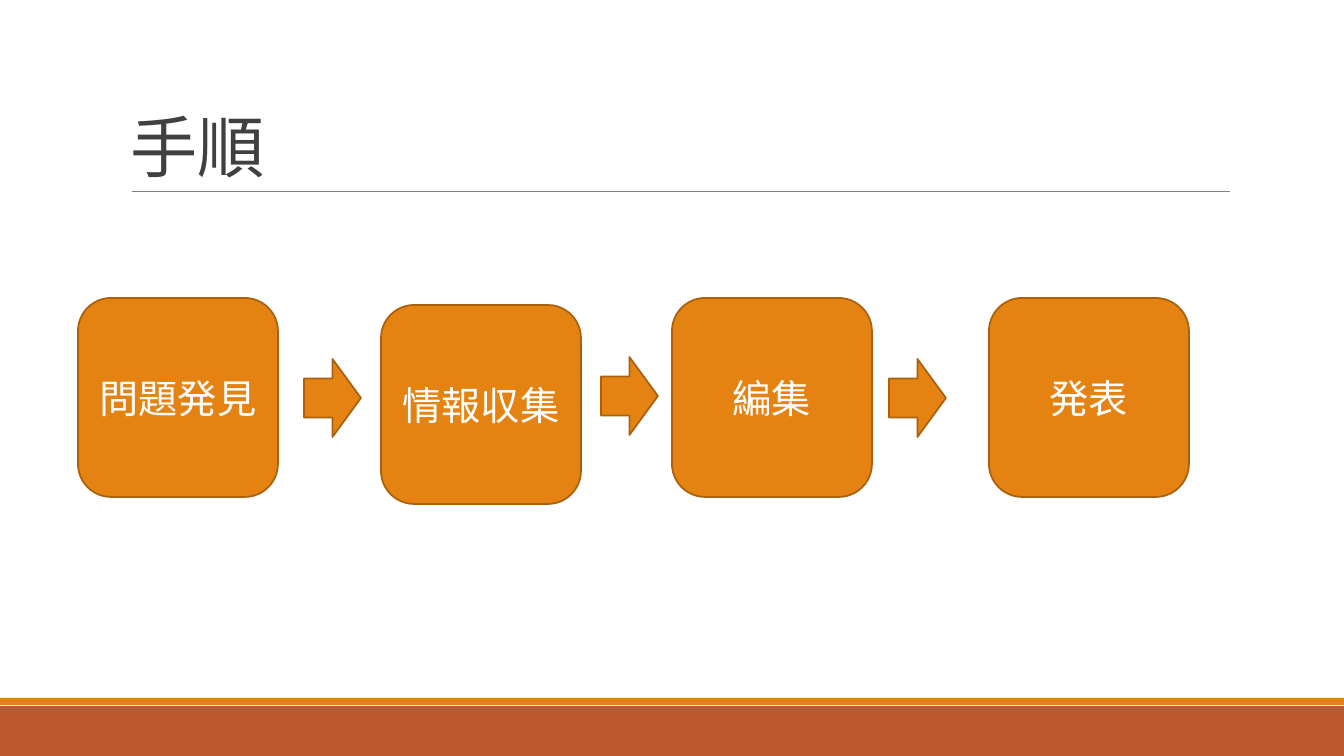
"""Build the slide showing the four steps of the procedure."""
import lxml.etree
import pptx
import pptx.dml.color
import pptx.enum.shapes
import pptx.enum.text
import pptx.oxml.ns
import pptx.util

RGBColor = pptx.dml.color.RGBColor
Shape = pptx.enum.shapes.MSO_SHAPE
Anchor = pptx.enum.text.MSO_ANCHOR
Align = pptx.enum.text.PP_ALIGN

TITLE = "手順"
STEPS = [("問題発見", 78, 298), ("情報収集", 381, 305), ("編集", 672, 298), ("発表", 989, 298)]
ARROWS = [(304, 359), (601, 357), (889, 359)]
STEP_SIZE = (200, 199)
ARROW_SIZE = (57, 78)

SLIDE_W, SLIDE_H = 1344, 756
FOOTER_H, STRIPE_H = 50, 7
FONT = "Calibri"
ORANGE = RGBColor(0xE4, 0x83, 0x12)
OUTLINE = RGBColor(0xA9, 0x61, 0x0D)
RUST = RGBColor(0xBD, 0x58, 0x2C)
GRAY = RGBColor(0x80, 0x80, 0x80)
DARK = RGBColor(0x40, 0x40, 0x40)
WHITE = RGBColor(0xFF, 0xFF, 0xFF)


def px(length):
    return round(length * 914400 / 100.8)


def add_block(slide, kind, left, top, size, fill, outline=None):
    block = slide.shapes.add_shape(kind, px(left), px(top), px(size[0]), px(size[1]))
    block.shadow.inherit = False
    block.fill.solid()
    block.fill.fore_color.rgb = fill
    if outline is None:
        block.line.fill.background()
    else:
        block.line.color.rgb = outline
        block.line.width = pptx.util.Pt(1.25)
    return block


def write(holder, text, size, color, align, anchor):
    frame = holder.text_frame
    frame.word_wrap = True
    frame.vertical_anchor = anchor
    paragraph = frame.paragraphs[0]
    paragraph.alignment = align
    run = paragraph.add_run()
    run.text = text
    run.font.name = FONT
    run.font.size = pptx.util.Pt(size)
    run.font.color.rgb = color
    return paragraph, run


def add_heading(slide):
    rule = slide.shapes.add_connector(
        pptx.enum.shapes.MSO_CONNECTOR.STRAIGHT, px(132), px(191), px(1230), px(191))
    rule.line.color.rgb = GRAY
    rule.line.width = pptx.util.Pt(0.5)
    lxml.etree.SubElement(rule._element.spPr, pptx.oxml.ns.qn("a:effectLst"))

    heading = slide.shapes.add_textbox(px(121), px(31), px(1109), px(160))
    paragraph, run = write(heading, TITLE, 48, DARK, Align.LEFT, Anchor.BOTTOM)
    paragraph.line_spacing = 0.85
    run._r.get_or_add_rPr().set("spc", "-50")


def main():
    deck = pptx.Presentation()
    deck.slide_width, deck.slide_height = px(SLIDE_W), px(SLIDE_H)
    slide = deck.slides.add_slide(deck.slide_layouts[6])

    footer_top = SLIDE_H - FOOTER_H
    add_block(slide, Shape.RECTANGLE, 0, footer_top, (SLIDE_W, FOOTER_H), RUST)
    add_block(slide, Shape.RECTANGLE, 0, footer_top - STRIPE_H - 1, (SLIDE_W, STRIPE_H), ORANGE)
    add_heading(slide)

    for label, left, top in STEPS:
        step = add_block(slide, Shape.ROUNDED_RECTANGLE, left, top, STEP_SIZE, ORANGE, OUTLINE)
        write(step, label, 28, WHITE, Align.CENTER, Anchor.MIDDLE)
    for left, top in ARROWS:
        add_block(slide, Shape.RIGHT_ARROW, left, top, ARROW_SIZE, ORANGE, OUTLINE)

    deck.save("out.pptx")


if __name__ == "__main__":
    main()
